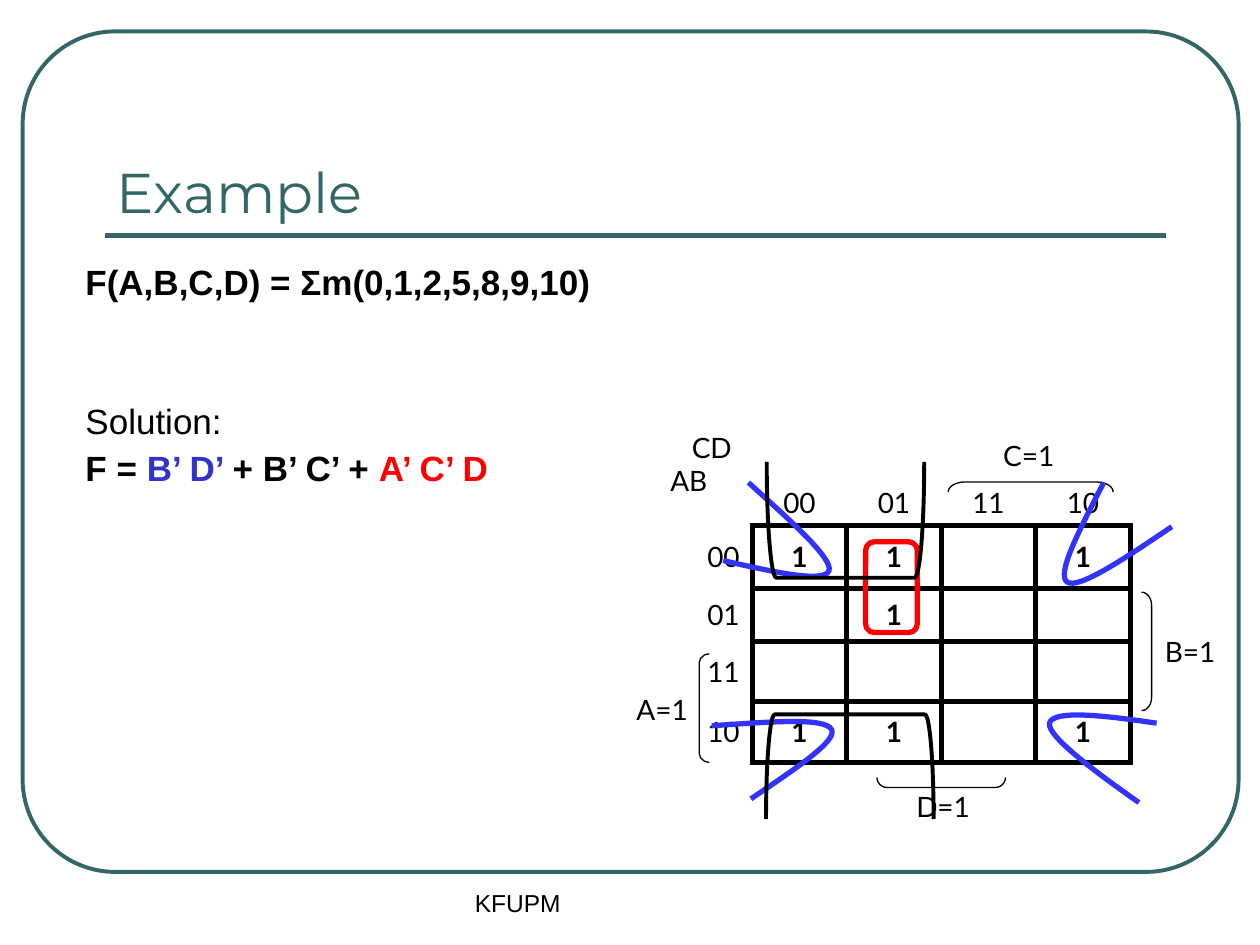
"""Build a slide that solves a four-variable Karnaugh map example."""
import dataclasses

import lxml.etree
import pptx
import pptx.dml.color
import pptx.enum.shapes
import pptx.enum.text
import pptx.oxml.ns
import pptx.util

SHAPES = pptx.enum.shapes.MSO_SHAPE
ALIGN = pptx.enum.text.PP_ALIGN
ANCHOR = pptx.enum.text.MSO_ANCHOR
qn = pptx.oxml.ns.qn


@dataclasses.dataclass(frozen=True)
class Theme:
    teal: str = "336666"
    ink: str = "000000"
    red: str = "FF0000"
    blue: str = "3333CC"
    loop_blue: str = "3333FF"
    title_font: str = "Montserrat"
    body_font: str = "Arial"
    map_font: str = "Lato"
    title_size: int = 32
    body_size: int = 20
    map_size: int = 16
    footer_size: int = 14
    heavy: float = 3
    medium: float = 2.25
    thin: float = 0.75


THEME = Theme()
PX = 9144
NO_GRID_STYLE = "{2D5ABB26-0587-4C30-8999-92F81FD0307C}"

FRAME = (18, 25, 965, 667)
TITLE_RULE = (83, 187, 925, 187)
TITLE = ("Example", (83, 58, 841, 125))
FOOTER = ("KFUPM", (367, 700, 316, 50))
BODY_BOX = (58, 208, 483, 483)
BODY = [
    (7.8, True, [("F(A,B,C,D) = Σm(0,1,2,5,8,9,10)", THEME.ink)]),
    (60.5, False, [("Solution:", THEME.ink)]),
    (7.8, True, [("F = ", THEME.ink), ("B’ D’ ", THEME.blue),
                 ("+ B’ C’ + ", THEME.ink), ("A’ C’ D", THEME.red)]),
]

MAP_LEFT, MAP_TOP, COLUMN_WIDTH = 522, 337, 75
ROW_HEIGHTS = [80, 50, 42, 48, 48]
CORNER = "CD\vAB"
CORNER_INDENT = 17
GRAY_CODE = ["00", "01", "11", "10"]
MINTERMS = {0, 1, 2, 5, 8, 9, 10}

VARIABLES = [
    ("A=1", (495, 545, 61, 37), SHAPES.LEFT_BRACKET, (555, 519, 8, 86), 0, 0.859),
    ("C=1", (786, 343, 61, 37), SHAPES.LEFT_BRACKET, (814, 321, 8, 131), 90, 1.642),
    ("D=1", (717, 622, 63, 37), SHAPES.LEFT_BRACKET, (743, 570, 8, 102), 270, 1.019),
    ("B=1", (914, 499, 61, 37), SHAPES.RIGHT_BRACKET, (906, 470, 8, 94), 0, 1.309),
]
RED_LOOP = (687, 430, 41, 72)
CORNER_LOOPS = [
    [(876, 383), (857, 420), (838, 456), (847, 462), (856, 468), (893, 443), (930, 418)],
    [(918, 574), (877, 568), (836, 563), (833, 574), (831, 584), (867, 611), (904, 637)],
    [(596, 634), (630, 611), (665, 588), (660, 579), (655, 569), (610, 573), (565, 576)],
    [(574, 445), (614, 454), (654, 463), (658, 453), (661, 443), (627, 413), (594, 383)],
]
EDGE_LOOPS = [((633, 542, 83, 133), 270), ((625, 350, 92, 125), 90)]


def emu(box):
    return [length * PX for length in box]


def rgb(color):
    return pptx.dml.color.RGBColor.from_string(color)


def set_font(font, name, size, color=None, bold=False):
    font.name, font.size, font.bold = name, pptx.util.Pt(size), bold
    if color:
        font.color.rgb = rgb(color)


def set_line(shape, color, width):
    shape.line.color.rgb = rgb(color)
    shape.line.width = pptx.util.Pt(width)


def add_outline(slide, kind, box, color, width, adjustment, rotation=0):
    shape = slide.shapes.add_shape(kind, *emu(box))
    shape.adjustments[0] = adjustment
    shape.rotation = rotation
    shape.fill.background()
    shape.shadow.inherit = False
    set_line(shape, color, width)


def add_text_frame(slide, box, wrap=True, anchor=ANCHOR.TOP):
    frame = slide.shapes.add_textbox(*emu(box)).text_frame
    frame.word_wrap, frame.vertical_anchor = wrap, anchor
    return frame


def add_label(slide, text, box, font, size, color, **layout):
    paragraph = add_text_frame(slide, box, **layout).paragraphs[0]
    paragraph.text = text
    set_font(paragraph.font, font, size, color)
    return paragraph


def add_body(slide):
    frame = add_text_frame(slide, BODY_BOX)
    for index, (space, bold, runs) in enumerate(BODY):
        paragraph = frame.add_paragraph() if index else frame.paragraphs[0]
        paragraph.line_spacing = 0.8
        paragraph.space_before = pptx.util.Pt(space)
        set_font(paragraph.font, THEME.body_font, THEME.body_size, bold=bold)
        for text, color in runs:
            run = paragraph.add_run()
            run.text = text
            run.font.color.rgb = rgb(color)


def set_borders(cell, sides):
    properties = cell._tc.get_or_add_tcPr()
    for side in sides:
        line = lxml.etree.SubElement(properties, qn(f"a:ln{side}"),
                                     w=str(pptx.util.Pt(THEME.heavy)))
        fill = lxml.etree.SubElement(line, qn("a:solidFill"))
        lxml.etree.SubElement(fill, qn("a:srgbClr"), val=THEME.ink)


def map_rows():
    yield [CORNER] + GRAY_CODE
    for row in GRAY_CODE:
        yield [row] + ["1" if int(row + column, 2) in MINTERMS else ""
                       for column in GRAY_CODE]


def add_map(slide):
    columns = len(GRAY_CODE) + 1
    box = (MAP_LEFT, MAP_TOP, COLUMN_WIDTH * columns, sum(ROW_HEIGHTS))
    table = slide.shapes.add_table(len(ROW_HEIGHTS), columns, *emu(box)).table
    table.first_row = table.horz_banding = False
    table._tbl.tblPr.find(qn("a:tableStyleId")).text = NO_GRID_STYLE
    for row, height in zip(table.rows, ROW_HEIGHTS):
        row.height = height * PX
    for r, values in enumerate(map_rows()):
        for c, value in enumerate(values):
            cell = table.cell(r, c)
            cell.text = value
            paragraph = cell.text_frame.paragraphs[0]
            set_font(paragraph.font, THEME.map_font, THEME.map_size, THEME.ink,
                     bold=bool(r and c))
            if r or c:
                paragraph.alignment = ALIGN.CENTER if c else ALIGN.RIGHT
                cell.vertical_anchor = ANCHOR.MIDDLE if r else ANCHOR.BOTTOM
                set_borders(cell, "LRTB" if r and c else "R" if r else "B")
            else:
                paragraph._p.get_or_add_pPr().set("indent", str(CORNER_INDENT * PX))
            cell.fill.background()


def add_curve(slide, points):
    builder = slide.shapes.build_freeform(*points[0], scale=PX)
    builder.add_line_segments(points[1:], close=False)
    shape = builder.convert_to_shape()
    segments = list(shape._element.iter(qn("a:lnTo")))
    for start in range(0, len(segments), 3):
        curve = lxml.etree.Element(qn("a:cubicBezTo"))
        segments[start].addprevious(curve)
        for segment in segments[start:start + 3]:
            curve.append(segment[0])
            segment.getparent().remove(segment)
    shape.fill.background()
    shape.shadow.inherit = False
    set_line(shape, THEME.loop_blue, THEME.heavy)


def add_rule(slide):
    rule = slide.shapes.add_connector(pptx.enum.shapes.MSO_CONNECTOR.STRAIGHT,
                                      *emu(TITLE_RULE))
    set_line(rule, THEME.teal, THEME.heavy)
    lxml.etree.SubElement(rule._element.spPr, qn("a:effectLst"))


def main():
    presentation = pptx.Presentation()
    presentation.slide_width, presentation.slide_height = emu((1000, 750))
    slide = presentation.slides.add_slide(presentation.slide_layouts[6])
    add_outline(slide, SHAPES.ROUNDED_RECTANGLE, FRAME, THEME.teal, THEME.medium, 0.11)
    add_rule(slide)
    add_label(slide, *TITLE, THEME.title_font, THEME.title_size, THEME.teal,
              anchor=ANCHOR.BOTTOM)
    add_body(slide)
    add_map(slide)
    for text, text_box, kind, box, rotation, curve in VARIABLES:
        add_outline(slide, kind, box, THEME.ink, THEME.thin, curve, rotation)
        label = add_label(slide, text, text_box, THEME.map_font, THEME.map_size,
                          THEME.ink, wrap=False)
        label.alignment = ALIGN.CENTER
    add_label(slide, *FOOTER, THEME.body_font, THEME.footer_size, THEME.ink)
    add_outline(slide, SHAPES.ROUNDED_RECTANGLE, RED_LOOP, THEME.red, THEME.heavy, 0.167)
    for points in CORNER_LOOPS:
        add_curve(slide, points)
    for box, rotation in EDGE_LOOPS:
        add_outline(slide, SHAPES.RIGHT_BRACKET, box, THEME.ink, THEME.medium, 0.083,
                    rotation)
    presentation.save("out.pptx")


if __name__ == "__main__":
    main()
